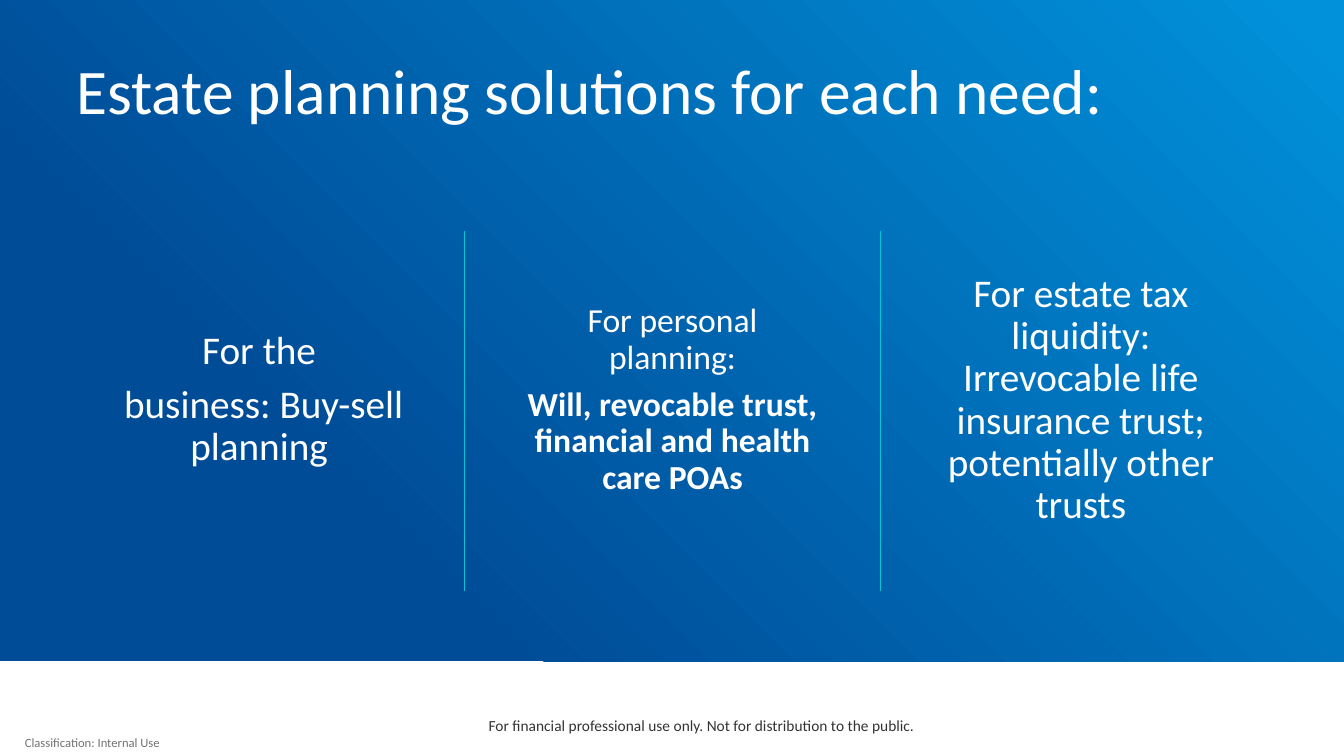
from pptx import Presentation
from pptx.dml.color import RGBColor
from pptx.enum.shapes import MSO_CONNECTOR, MSO_SHAPE
from pptx.enum.text import MSO_ANCHOR, PP_ALIGN
from pptx.oxml.ns import qn
from pptx.util import Inches, Pt
from lxml import etree

LEFT, CENTER = PP_ALIGN.LEFT, PP_ALIGN.CENTER
TOP, MIDDLE = MSO_ANCHOR.TOP, MSO_ANCHOR.MIDDLE
RECTANGLE = MSO_SHAPE.RECTANGLE
STRAIGHT = MSO_CONNECTOR.STRAIGHT
FONT = "Calibri"
COLORS = {
    "navy": "004C97",
    "sky": "0091DA",
    "divider": "00C4D9",
    "white": "FFFFFF",
    "footer": "333333",
    "classification": "737373",
}

prs = Presentation()
prs.slide_width, prs.slide_height = Inches(13.33), Inches(7.5)
slide = prs.slides.add_slide(prs.slide_layouts[6])


def color(name):
    return RGBColor.from_string(COLORS[name])


def add_text(box, paragraphs, size, ink, align=CENTER, anchor=MIDDLE,
             insets=(0.1, 0.05, 0.1, 0.05), spacing=None, after=0):
    """Add a text box; paragraphs are (text, bold) pairs."""
    frame = slide.shapes.add_textbox(*map(Inches, box)).text_frame
    frame.word_wrap = True
    frame.vertical_anchor = anchor
    (frame.margin_left, frame.margin_top,
     frame.margin_right, frame.margin_bottom) = map(Inches, insets)
    for i, (text, bold) in enumerate(paragraphs):
        paragraph = frame.add_paragraph() if i else frame.paragraphs[0]
        paragraph.alignment = align
        paragraph.line_spacing = spacing
        paragraph.space_after = Pt(after)
        run = paragraph.add_run()
        run.text = text
        run.font.name, run.font.size, run.font.bold = FONT, Pt(size), bold
        run.font.color.rgb = color(ink)


# Blue gradient panel
panel = slide.shapes.add_shape(RECTANGLE, 0, 0, prs.slide_width, Inches(6.56))
panel.shadow.inherit = False
panel.line.fill.background()
panel.fill.gradient()
panel.fill.gradient_angle = 45
for stop, (name, position) in zip(panel.fill.gradient_stops,
                                  [("navy", 0.25), ("sky", 0.98)]):
    stop.color.rgb = color(name)
    stop.position = position

# Three solution columns
COLUMN_LEFT, COLUMN_STEP, COLUMN_TOP, COLUMN_HEIGHT = 0.67, 4.1, 1.91, 3.92
solutions = [
    (3.8, 28, [("For the", False), (" business: Buy-sell planning", False)]),
    (3.8, 24, [("For personal planning:", False),
               ("Will, revocable trust, financial and health care POAs", True)]),
    (3.7, 28, [("For estate tax liquidity: Irrevocable life insurance trust; "
                "potentially other trusts", False)]),
]
for column, (width, size, paragraphs) in enumerate(solutions):
    add_text((COLUMN_LEFT + column * COLUMN_STEP, COLUMN_TOP, width, COLUMN_HEIGHT),
             paragraphs, size, "white", insets=(0.4, 0.6, 0.4, 0.4),
             spacing=0.9, after=8)

# Dividers between the columns
for x in (4.61, 8.73):
    divider = slide.shapes.add_connector(
        STRAIGHT, Inches(x), Inches(2.29), Inches(x), Inches(5.86))
    divider.line.color.rgb = color("divider")
    divider.line.width = Pt(0.75)
    etree.SubElement(divider.element.spPr, qn("a:effectLst"))

# Title
add_text((0.66, 0.6, 12, 1.13), [("Estate planning solutions for each need:", False)],
         45.3, "white", align=LEFT, anchor=TOP, spacing=0.8)

# Footer and classification
add_text((3.08, 7.1, 7.76, 0.4),
         [("For financial professional use only. Not for distribution to the public.", False)],
         11, "footer", anchor=TOP, insets=(0.1, 0, 0.1, 0))
add_text((0, 7.23, 1.83, 0.27), [("Classification: Internal Use", False)],
         9, "classification", insets=(0, 0, 0, 0))

prs.save("out.pptx")
